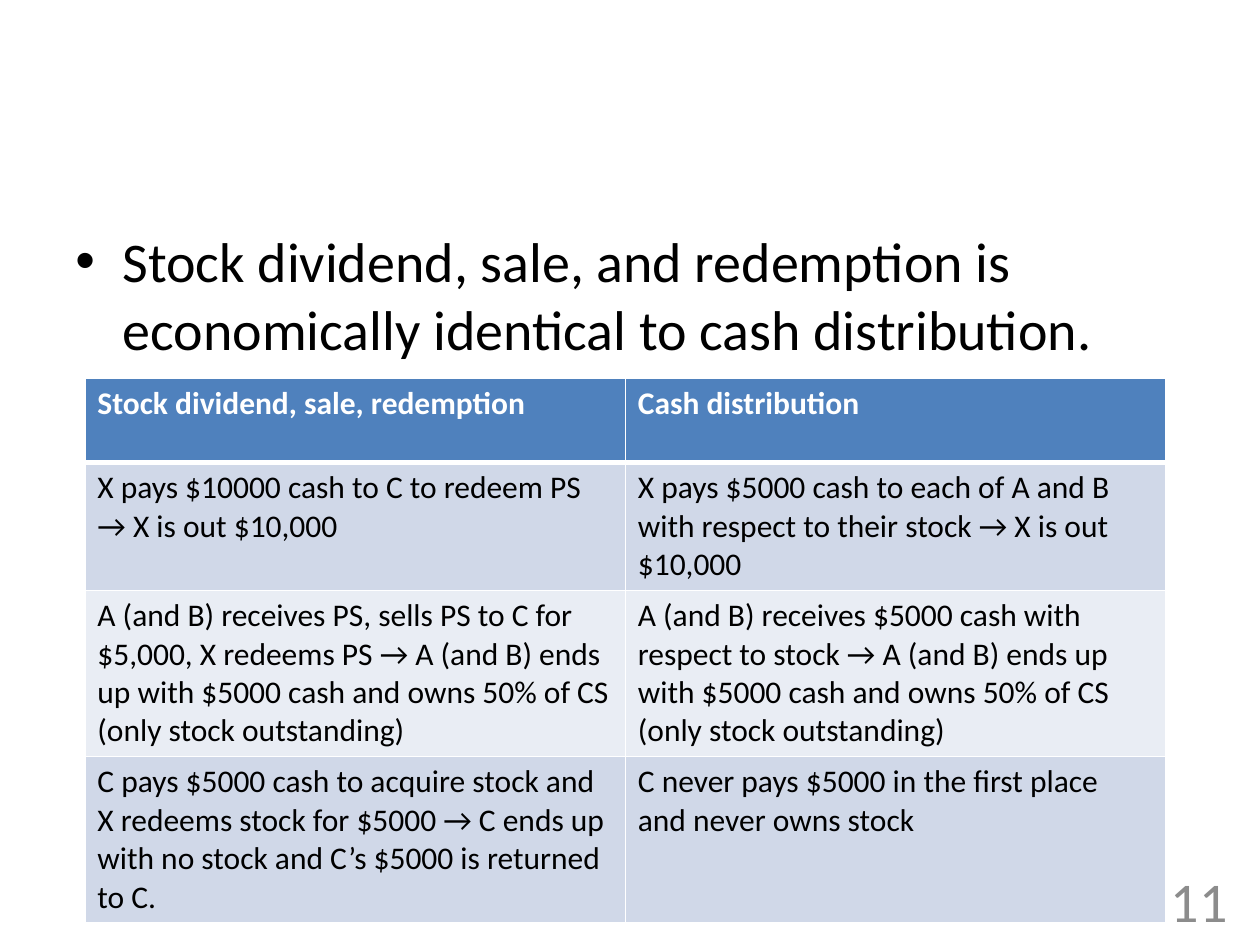
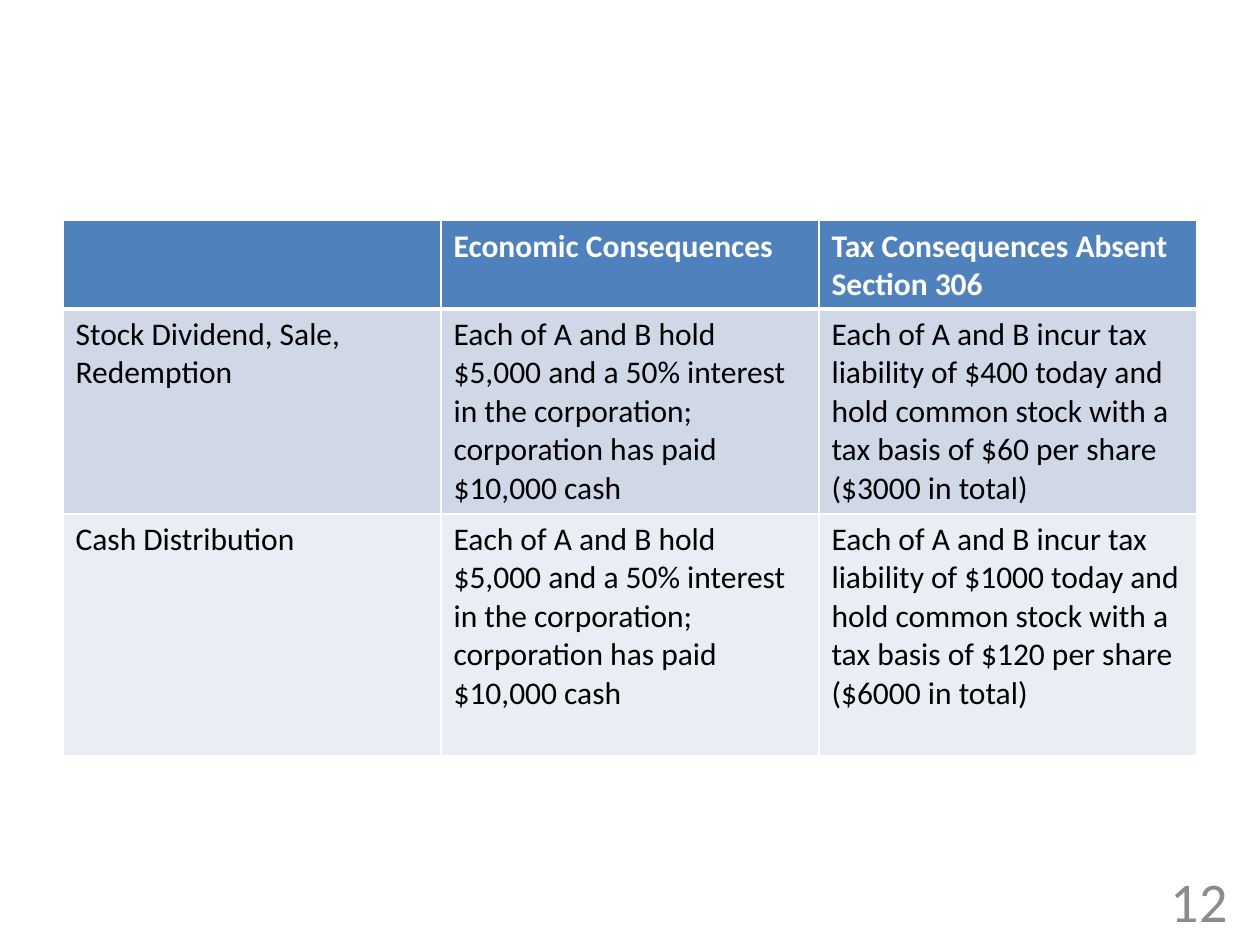
from lxml import etree
from pptx import Presentation
from pptx.dml.color import RGBColor
from pptx.enum import text
from pptx.oxml import parse_xml
from pptx.oxml.ns import nsdecls, qn
from pptx.util import Cm, Pt

FONT = "Calibri"
BLACK, WHITE, GREY = "000000", "FFFFFF", "8C8C8C"
HEADER_FILL = "4F81BD"
BAND_FILLS = ["D0D8E8", "E9EDF4"]
TABLE_SIZE, LARGE_SIZE = 18, 32
RULE, HEADER_RULE = 1, 3

ECONOMIC_RESULT = (
    "Each of A and B hold $5,000 and a 50% interest in the corporation; "
    "corporation has paid $10,000 cash"
)

# Lengths in centimetres
SLIDES = [
    {
        "number": 11,
        "point": "Stock dividend, sale, and redemption is economically identical "
                 "to cash distribution.",
        "place": (1.71, 7.62),
        "width": 21.79,
        "row_heights": [1.7, 2.58, 3.35, 3.35],
        "rows": [
            ["Stock dividend, sale, redemption", "Cash distribution"],
            ["X pays $10000 cash to C to redeem PS → X is out $10,000",
             "X pays $5000 cash to each of A and B with respect to their stock "
             "→ X is out $10,000"],
            ["A (and B) receives PS, sells PS to C for $5,000, X redeems PS → "
             "A (and B) ends up with $5000 cash and owns 50% of CS (only stock outstanding)",
             "A (and B) receives $5000 cash with respect to stock → A (and B) ends up "
             "with $5000 cash and owns 50% of CS (only stock outstanding)"],
            ["C pays $5000 cash to acquire stock and X redeems stock for $5000 → "
             "C ends up with no stock and C’s $5000 is returned to C.",
             "C never pays $5000 in the first place and never owns stock"],
        ],
    },
    {
        "number": 12,
        "point": None,
        "place": (1.27, 4.45),
        "width": 22.86,
        "row_heights": [1.78, 4.13, 4.88],
        "rows": [
            ["", "Economic Consequences", "Tax Consequences Absent Section 306"],
            ["Stock Dividend, Sale, Redemption", ECONOMIC_RESULT,
             "Each of A and B incur tax liability of $400 today and hold common stock "
             "with a tax basis of $60 per share ($3000 in total)"],
            ["Cash Distribution", ECONOMIC_RESULT,
             "Each of A and B incur tax liability of $1000 today and hold common stock "
             "with a tax basis of $120 per share ($6000 in total)"],
        ],
    },
]


def color(value):
    return RGBColor.from_string(value)


def add_span(para, words, size, ink, bold=False):
    span = para.add_run()
    span.text = words
    span.font.name = FONT
    span.font.size = Pt(size)
    span.font.bold = bold
    span.font.color.rgb = color(ink)


def add_box(page, left, top, width, height):
    box = page.shapes.add_textbox(Cm(left), Cm(top), Cm(width), Cm(height))
    box.text_frame.word_wrap = True
    return box.text_frame


def add_point(page, words):
    para = add_box(page, 1.27, 4.45, 22.86, 12.57).paragraphs[0]
    para.space_before = Pt(LARGE_SIZE * 0.2)
    properties = para._p.get_or_add_pPr()
    properties.set("marL", str(Cm(0.95)))
    properties.set("indent", str(-Cm(0.95)))
    etree.SubElement(properties, qn("a:buFont")).set("typeface", "Arial")
    etree.SubElement(properties, qn("a:buChar")).set("char", "•")
    add_span(para, words, LARGE_SIZE, BLACK)


def add_number(page, number):
    frame = add_box(page, 18.2, 17.65, 6.8, 1.01)
    frame.vertical_anchor = text.MSO_ANCHOR.MIDDLE
    para = frame.paragraphs[0]
    para.alignment = text.PP_ALIGN.RIGHT
    add_span(para, str(number), LARGE_SIZE, GREY)


def set_borders(cell, row):
    """Draw white rules, with a heavier one under the header row."""
    widths = {
        "lnL": RULE,
        "lnR": RULE,
        "lnT": HEADER_RULE if row == 1 else RULE,
        "lnB": HEADER_RULE if row == 0 else RULE,
    }
    for side, width in widths.items():
        cell._tc.get_or_add_tcPr().append(parse_xml(
            f'<a:{side} {nsdecls("a")} w="{Pt(width)}"><a:solidFill>'
            f'<a:srgbClr val="{WHITE}"/></a:solidFill></a:{side}>'
        ))


def add_comparison(page, rows, place, width, row_heights):
    left, top = place
    columns = len(rows[0])
    table = page.shapes.add_table(
        len(rows), columns, Cm(left), Cm(top), Cm(width), Cm(sum(row_heights))
    ).table
    for column in table.columns:
        column.width = Cm(width / columns)
    for row, (height, entries) in enumerate(zip(row_heights, rows)):
        table.rows[row].height = Cm(height)
        header = row == 0
        for index, words in enumerate(entries):
            cell = table.cell(row, index)
            set_borders(cell, row)
            cell.fill.solid()
            cell.fill.fore_color.rgb = color(
                HEADER_FILL if header else BAND_FILLS[(row - 1) % 2])
            if words:
                add_span(cell.text_frame.paragraphs[0], words, TABLE_SIZE,
                         WHITE if header else BLACK, bold=header)


def main():
    deck = Presentation()
    deck.slide_width, deck.slide_height = Cm(25.4), Cm(19.05)
    for slide in SLIDES:
        page = deck.slides.add_slide(deck.slide_layouts[6])
        if slide["point"]:
            add_point(page, slide["point"])
        add_comparison(page, slide["rows"], slide["place"], slide["width"],
                       slide["row_heights"])
        add_number(page, slide["number"])
    deck.save("out.pptx")


if __name__ == "__main__":
    main()
